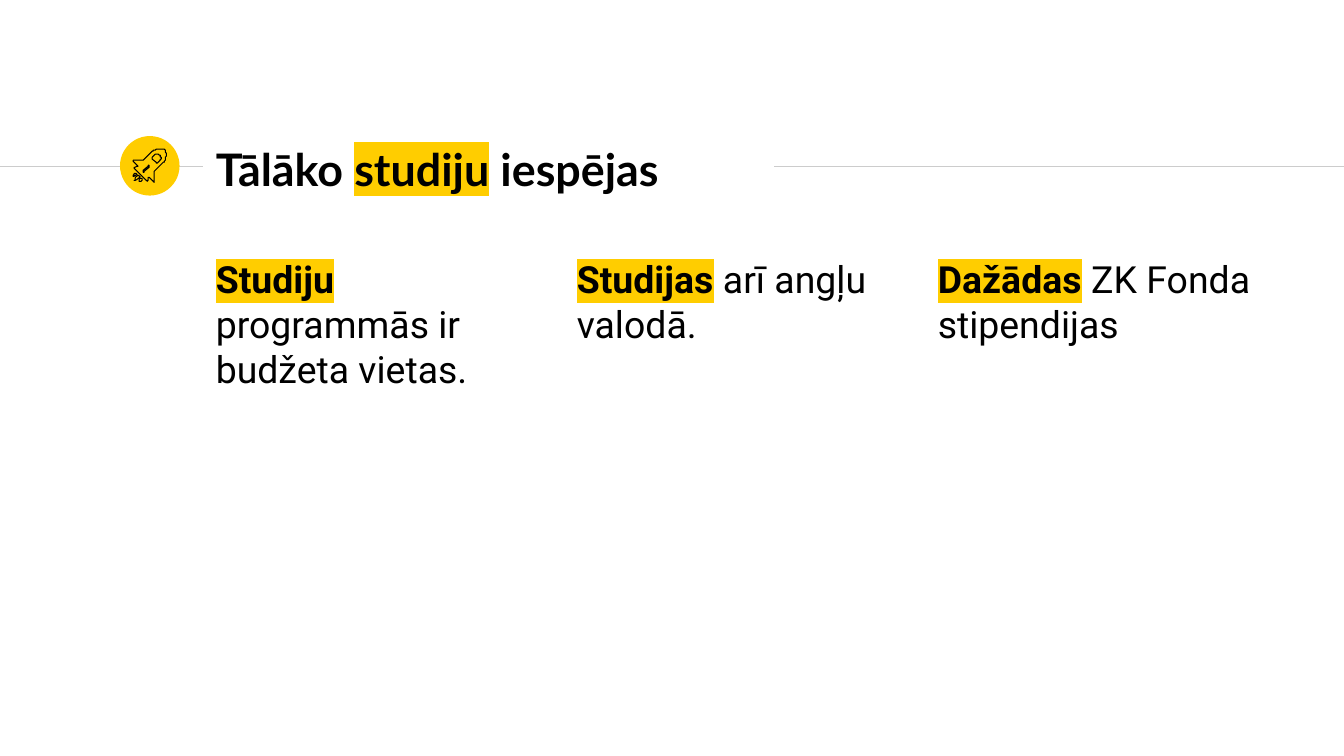
import pptx
import pptx.util
import pptx.dml.color
import pptx.enum.shapes
import pptx.enum.text
import pptx.oxml
import pptx.oxml.ns

HUES = {"ink": "000000", "mark": "FFCD00", "rule": "CCCCCC"}

HULL = [
    (153, 180), (153, 170), (162, 161), (163, 161), (163, 160), (164, 159), (164, 156),
    (165, 155), (165, 152), (164, 151), (164, 149), (163, 148), (155, 148), (154, 149),
    (152, 149), (152, 150), (151, 150), (142, 159), (132, 159), (132, 160), (137, 165),
    (136, 165), (134, 166), (133, 166), (133, 167), (145, 179), (146, 179), (146, 180),
    (147, 179), (147, 176), (148, 176), (152, 180), (153, 181)]
SLOT = [
    (143, 170), (143, 171), (142, 171), (142, 169), (147, 165), (147, 164), (148, 164),
    (148, 166)]
PORT = [
    (157, 161), (156, 162), (155, 162), (155, 161), (151, 158), (151, 156), (153, 154),
    (154, 153), (157, 153), (158, 154), (159, 154), (159, 156), (160, 156), (160, 158),
    (159, 158), (159, 159), (158, 160)]
FLAME = [
    (138, 174), (136, 174), (136, 175), (135, 175), (134, 177), (134, 179), (133, 179),
    (134, 179), (136, 178), (137, 177), (138, 177), (138, 176), (139, 176), (139, 175),
    (138, 175)]
SPARK = [
    (141, 177), (139, 177), (138, 178), (138, 180), (140, 180), (141, 179)]
PUFF = [
    (135, 172), (133, 172), (133, 173), (132, 174), (132, 175), (133, 175), (134, 174),
    (135, 174), (135, 173), (136, 173)]


class Deck:
    def __init__(self):
        self.file = pptx.Presentation()
        self.file.slide_width = pptx.util.Inches(13.33)
        self.file.slide_height = pptx.util.Inches(7.5)
        self.slide = self.file.slides.add_slide(self.file.slide_layouts[4])
        self.inset = pptx.util.Inches(0.13)
        self.thin = pptx.util.Pt(0.75)

    def wide(self, share):
        return round(self.file.slide_width * share / 100)

    def high(self, share):
        return round(self.file.slide_height * share / 100)

    def hue(self, name):
        return pptx.dml.color.RGBColor.from_string(HUES[name])

    def rule(self, start, end, row):
        line = self.slide.shapes.add_connector(
            pptx.enum.shapes.MSO_CONNECTOR.STRAIGHT,
            self.wide(start), self.high(row), self.wide(end), self.high(row))
        line.line.color.rgb = self.hue("rule")
        line.line.width = self.thin
        props = line._element.spPr
        props.append(pptx.oxml.parse_xml(
            f'<a:effectLst {pptx.oxml.ns.nsdecls("a")}/>'))

    def disc(self, left, top, size):
        disc = self.slide.shapes.add_shape(
            pptx.enum.shapes.MSO_SHAPE.OVAL,
            self.wide(left), self.high(top), self.wide(size), self.wide(size))
        disc.shadow.inherit = False
        disc.fill.solid()
        disc.fill.fore_color.rgb = self.hue("mark")
        disc.line.fill.background()

    def icon(self, parts):
        group = self.slide.shapes.add_group_shape()
        unit = self.file.slide_width / 1333
        for first, *rest in parts:
            pen = group.shapes.build_freeform(*first[0], scale=unit)
            pen.add_line_segments(first[1:], close=True)
            for loop in rest:
                pen.move_to(*loop[0])
                pen.add_line_segments(loop[1:], close=True)
            part = pen.convert_to_shape()
            part.shadow.inherit = False
            part.fill.background()
            part.line.color.rgb = self.hue("ink")
            part.line.width = self.thin

    def text(self, slot, box, runs, font, size, anchor):
        hold = self.slide.placeholders[slot]
        left, top, width, height = box
        hold.left, hold.top = self.wide(left), self.high(top)
        hold.width, hold.height = self.wide(width), self.high(height)
        frame = hold.text_frame
        frame.word_wrap = True
        frame.auto_size = pptx.enum.text.MSO_AUTO_SIZE.NONE
        frame.vertical_anchor = anchor
        frame.margin_left = frame.margin_right = self.inset
        frame.margin_top = frame.margin_bottom = self.inset
        para = frame.paragraphs[0]
        para.alignment = pptx.enum.text.PP_ALIGN.LEFT
        para.space_before = pptx.util.Pt(0)
        props = para._p.get_or_add_pPr()
        props.set("marL", "0")
        props.set("indent", "0")
        props.append(pptx.oxml.parse_xml(
            f'<a:buNone {pptx.oxml.ns.nsdecls("a")}/>'))
        for words, bold, mark in runs:
            run = para.add_run()
            run.text = words
            run.font.name = font
            run.font.size = pptx.util.Pt(size)
            run.font.bold = bold
            run.font.color.rgb = self.hue("ink")
            if mark:
                fill = run._r.rPr.find(pptx.oxml.ns.qn("a:solidFill"))
                fill.addnext(pptx.oxml.parse_xml(
                    f'<a:highlight {pptx.oxml.ns.nsdecls("a")}>'
                    f'<a:srgbClr val="{HUES["mark"]}"/></a:highlight>'))

    def title(self, box, runs):
        self.text(0, box, runs, "Lato", 32, pptx.enum.text.MSO_ANCHOR.MIDDLE)

    def body(self, slot, box, lead, rest):
        runs = [(lead, True, True), (rest, False, False)]
        self.text(slot, box, runs, "Roboto", 26.7, pptx.enum.text.MSO_ANCHOR.TOP)

    def save(self):
        for hold in list(self.slide.placeholders):
            if not hold.text_frame.text:
                hold._element.getparent().remove(hold._element)
        self.file.save("out.pptx")


def main():
    deck = Deck()
    left, step = 15.08, 26.86
    deck.rule(0, left, 22)
    deck.disc(8.93, 18, 4.43)
    deck.rule(57.61, 100, 22)
    deck.title((left, 18, 42.46, 8.53), [
        ("Tālāko ", True, False), ("studiju", True, True), (" iespējas", True, False)])
    notes = [
        ("Studiju", " programmās ir budžeta vietas."),
        ("Studijas", " arī angļu valodā."),
        ("Dažādas", " ZK Fonda stipendijas")]
    for col, (lead, rest) in enumerate(notes):
        deck.body(col + 1, (left + col * step, 32.13, 25.51, 60.67), lead, rest)
    deck.icon([[HULL, SLOT, PORT], [FLAME], [SPARK], [PUFF]])
    deck.save()


if __name__ == "__main__":
    main()
